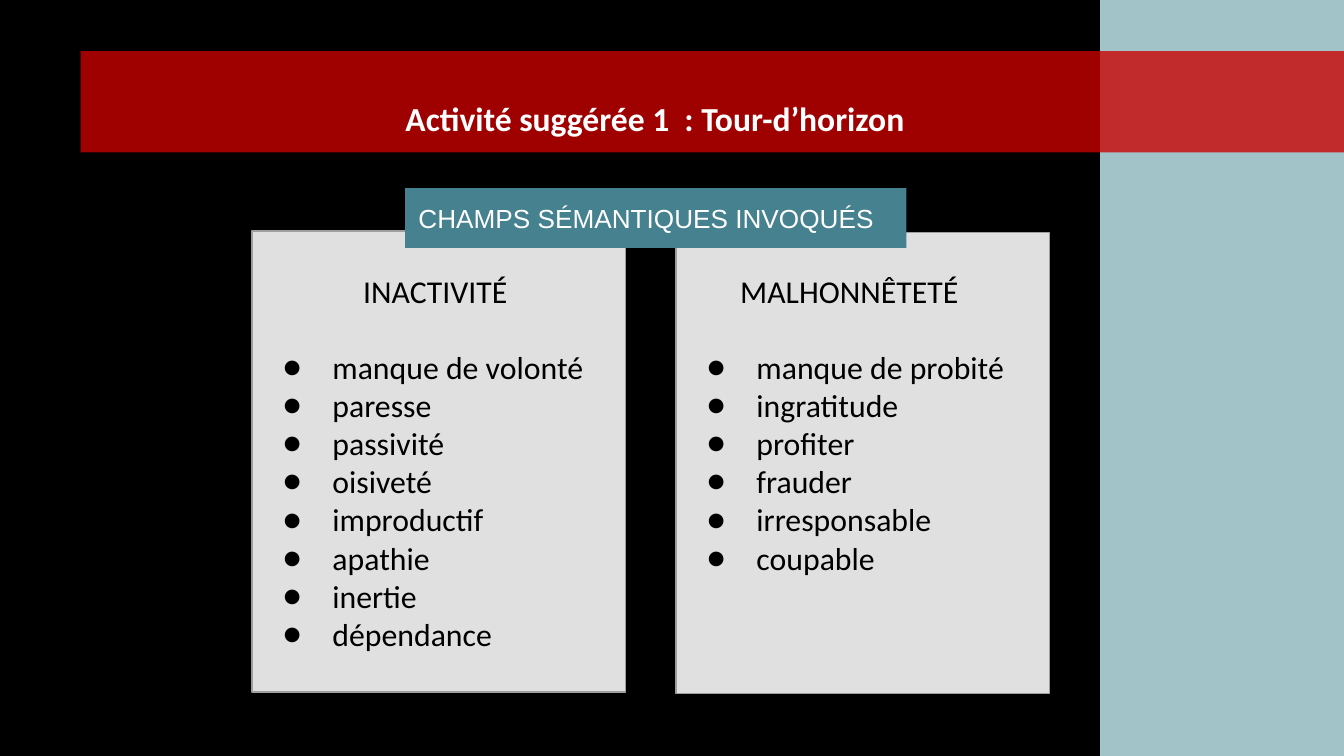
from lxml import etree
from pptx import Presentation
from pptx.dml.color import RGBColor
from pptx.enum.shapes import MSO_SHAPE
from pptx.enum.text import MSO_ANCHOR, MSO_AUTO_SIZE, PP_ALIGN
from pptx.oxml.ns import qn
from pptx.util import Inches, Pt

RECT = MSO_SHAPE.RECTANGLE
TOP, MIDDLE = MSO_ANCHOR.TOP, MSO_ANCHOR.MIDDLE
LEFT, CENTER = PP_ALIGN.LEFT, PP_ALIGN.CENTER
FIXED = MSO_AUTO_SIZE.NONE

BLACK = RGBColor(0x00, 0x00, 0x00)
WHITE = RGBColor(0xFF, 0xFF, 0xFF)
RED = RGBColor(0xCC, 0x00, 0x00)
PALE = RGBColor(0xA2, 0xC4, 0xC9)
TEAL = RGBColor(0x45, 0x81, 0x8E)
GRAY = RGBColor(0xE0, 0xE0, 0xE0)
EDGE = RGBColor(0x9E, 0x9E, 0x9E)

CELL = Inches(0.1)
COLS, ROWS = 100, 56.25

LISTS = [
    (18.75, 17.2, 27.3, 30.6, "INACTIVITÉ",
     ["manque de volonté", "paresse", "passivité", "oisiveté",
      "improductif", "apathie", "inertie", "dépendance"]),
    (50.3, 17.3, 25.8, 27.3, "MALHONNÊTETÉ",
     ["manque de probité", "ingratitude", "profiter", "frauder",
      "irresponsable", "coupable"]),
]


def grid(*cells):
    """Turn grid cells into lengths."""
    return [round(n * CELL) for n in cells]


def add_rect(slide, area, fill, edge=None, alpha=None):
    """Add a flat rectangle, with an edge or see-through if asked."""
    rect = slide.shapes.add_shape(RECT, *grid(*area))
    rect.shadow.inherit = False
    rect.fill.solid()
    rect.fill.fore_color.rgb = fill
    if edge is None:
        rect.line.fill.background()
    else:
        rect.line.color.rgb = edge
        rect.line.width = Pt(0.75)
    if alpha:
        color = rect._element.spPr.find(".//" + qn("a:srgbClr"))
        etree.SubElement(color, qn("a:alpha"), val=str(alpha * 1000))
    return rect


def set_frame(frame, anchor=TOP):
    """Give a text frame even margins and a fixed size."""
    frame.word_wrap = True
    frame.auto_size = FIXED
    frame.vertical_anchor = anchor
    frame.margin_left = frame.margin_right = CELL
    frame.margin_top = frame.margin_bottom = CELL


def add_run(para, text, size, color, font="Calibri", bold=False):
    """Add one formatted run to a paragraph."""
    run = para.add_run()
    run.text = text
    run.font.size = Pt(size)
    run.font.name = font
    run.font.bold = bold
    run.font.color.rgb = color


def add_bullet(para):
    """Give a paragraph a round bullet and a hanging indent."""
    props = para._p.get_or_add_pPr()
    props.set("marL", str(Inches(0.5)))
    props.set("indent", str(Inches(-0.37)))
    color = etree.SubElement(props, qn("a:buClr"))
    etree.SubElement(color, qn("a:srgbClr"), val=str(BLACK))
    etree.SubElement(props, qn("a:buFont"), typeface="Calibri")
    etree.SubElement(props, qn("a:buChar"), char="●")


def add_title(slide, area, text):
    """Place the title in front of the bands."""
    title = slide.shapes.title
    slide.shapes._spTree.append(title._element)
    title.left, title.top, title.width, title.height = grid(*area)
    set_frame(title.text_frame)
    para = title.text_frame.paragraphs[0]
    para.alignment = CENTER
    para.line_spacing = 1.5
    add_run(para, text, 18, WHITE, bold=True)


def add_list(slide, left, top, width, height, head, items):
    """Add a gray card with a heading and its bulleted words."""
    add_rect(slide, (left, top, 27.8, 34.3), GRAY, EDGE)
    box = slide.shapes.add_textbox(*grid(left, 19.2, width, height))
    frame = box.text_frame
    set_frame(frame)
    para = frame.paragraphs[0]
    para.alignment = CENTER
    para.space_after = Pt(20.5)
    add_run(para, head, 17, BLACK)
    for item in items:
        para = frame.add_paragraph()
        add_bullet(para)
        add_run(para, item, 17, BLACK)


def add_label(slide, area, text):
    """Add the teal label that joins the cards."""
    frame = add_rect(slide, area, TEAL).text_frame
    set_frame(frame, MIDDLE)
    para = frame.paragraphs[0]
    para.alignment = LEFT
    add_run(para, text, 14, WHITE, "Arial")


def main():
    """Build and save the slide."""
    deck = Presentation()
    deck.slide_width, deck.slide_height = grid(COLS, ROWS)
    slide = deck.slides.add_slide(deck.slide_layouts[5])
    slide.background.fill.solid()
    slide.background.fill.fore_color.rgb = BLACK
    add_rect(slide, (81.85, 0, COLS - 81.85, ROWS), PALE)
    add_rect(slide, (6, 3.8, COLS - 6, 7.55), RED, alpha=78)
    add_title(slide, (20.65, 4.8, 56.2, 5.5),
              "Activité suggérée 1  : Tour-d’horizon")
    for card in LISTS:
        add_list(slide, *card)
    add_label(slide, (30.15, 14, 37.3, 4.45), "CHAMPS SÉMANTIQUES INVOQUÉS")
    deck.save("out.pptx")


if __name__ == "__main__":
    main()
